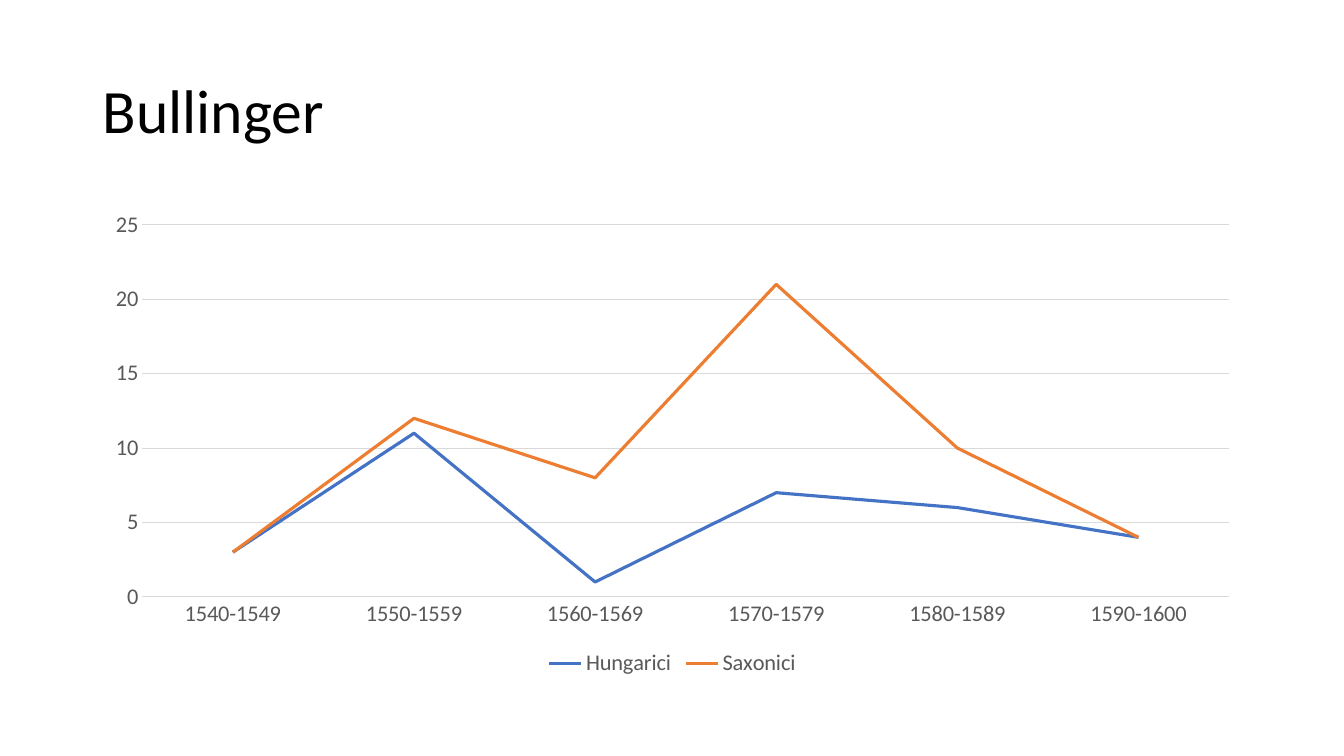
from dataclasses import dataclass

from pptx import Presentation
from pptx.chart.data import CategoryChartData
from pptx.dml.color import RGBColor
from pptx.enum.chart import XL_CHART_TYPE, XL_LEGEND_POSITION, XL_MARKER_STYLE, XL_TICK_MARK
from pptx.enum.text import MSO_ANCHOR
from pptx.util import Inches, Pt

LINE_STACKED = XL_CHART_TYPE.LINE_STACKED
BOTTOM = XL_LEGEND_POSITION.BOTTOM
NO_MARKER = XL_MARKER_STYLE.NONE
NO_TICK = XL_TICK_MARK.NONE
MIDDLE = MSO_ANCHOR.MIDDLE

TITLE = "Bullinger"
PERIODS = ["1540-1549", "1550-1559", "1560-1569", "1570-1579", "1580-1589", "1590-1600"]
SERIES = [
    ("Hungarici", (3, 11, 1, 7, 6, 4)),
    ("Saxonici", (0, 1, 7, 14, 4, 0)),
]


@dataclass(frozen=True)
class Theme:
    font: str = "Calibri"
    title_color: str = "000000"
    label_color: str = "595959"
    grid_color: str = "D9D9D9"
    series_colors: tuple = ("4472C4", "ED7D31")
    title_size: int = 44
    label_size: int = 16
    grid_width: float = 0.75
    series_width: float = 2.25


THEME = Theme()
SLIDE_W, SLIDE_H = 13.33, 7.5
LEFT, CONTENT_W = 0.92, 11.5
TITLE_TOP, TITLE_H = 0.4, 1.45
CHART_TOP, CHART_H = 2, 4.76


def style_font(font, size, color):
    font.name = THEME.font
    font.size = Pt(size)
    font.color.rgb = RGBColor.from_string(color)


def style_line(line, color, width):
    line.color.rgb = RGBColor.from_string(color)
    line.width = Pt(width)


def add_title(s):
    box = s.shapes.add_textbox(Inches(LEFT), Inches(TITLE_TOP), Inches(CONTENT_W), Inches(TITLE_H))
    tf = box.text_frame
    tf.word_wrap = True
    tf.vertical_anchor = MIDDLE
    p = tf.paragraphs[0]
    p.line_spacing = 0.9
    r = p.add_run()
    r.text = TITLE
    style_font(r.font, THEME.title_size, THEME.title_color)


def add_line_chart(s):
    data = CategoryChartData()
    data.categories = PERIODS
    for name, values in SERIES:
        data.add_series(name, values)
    chart = s.shapes.add_chart(
        LINE_STACKED, Inches(LEFT), Inches(CHART_TOP), Inches(CONTENT_W), Inches(CHART_H), data
    ).chart
    chart.has_title = False
    style_font(chart.font, THEME.label_size, THEME.label_color)

    chart.has_legend = True
    chart.legend.position = BOTTOM
    chart.legend.include_in_layout = False
    style_font(chart.legend.font, THEME.label_size, THEME.label_color)

    periods, counts = chart.category_axis, chart.value_axis
    for axis in (periods, counts):
        axis.major_tick_mark = NO_TICK
        axis.minor_tick_mark = NO_TICK
        style_font(axis.tick_labels.font, THEME.label_size, THEME.label_color)
    style_line(periods.format.line, THEME.grid_color, THEME.grid_width)
    counts.format.line.fill.background()
    counts.minimum_scale, counts.maximum_scale, counts.major_unit = 0, 25, 5
    counts.has_major_gridlines = True
    style_line(counts.major_gridlines.format.line, THEME.grid_color, THEME.grid_width)

    plot = chart.plots[0]
    plot.vary_by_categories = False
    for series, color in zip(plot.series, THEME.series_colors):
        series.smooth = False
        series.marker.style = NO_MARKER
        style_line(series.format.line, color, THEME.series_width)


def main():
    prs = Presentation()
    prs.slide_width, prs.slide_height = Inches(SLIDE_W), Inches(SLIDE_H)
    s = prs.slides.add_slide(prs.slide_layouts[6])
    add_title(s)
    add_line_chart(s)
    prs.save("out.pptx")


if __name__ == "__main__":
    main()
